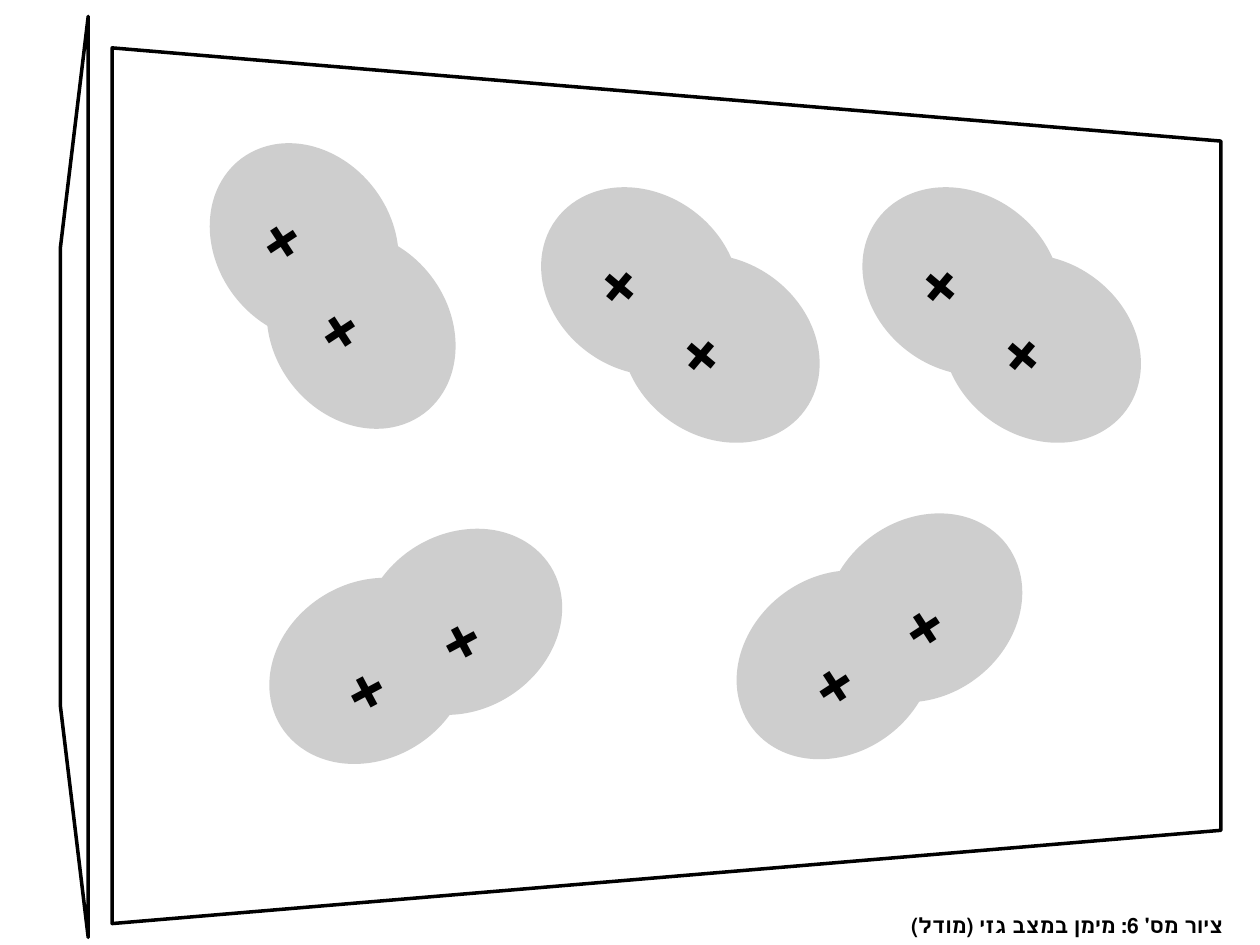
"""Build a slide with a model of hydrogen gas molecules in a container."""
from math import cos, radians, sin

from lxml import etree
from pptx import Presentation, util as u
from pptx.dml.color import RGBColor
from pptx.enum import shapes, text
from pptx.oxml.ns import qn

TITLE = "ציור מס' 6: מימן במצב גזי (מודל)"
FONT = "Times New Roman"
COLORS = {"ink": "000000", "atom": "CECECE"}
WALL_UNIT = u.Inches(0.01)
WALLS = [
    [(89, 38), (969, 112), (969, 659), (89, 733)],
    [(70, 13), (48, 196), (48, 561), (70, 744)],
]
MOLECULES = [
    (2.64, 2.27, 57),
    (5.4, 2.5, 40),
    (7.95, 2.5, 40),
    (6.98, 5.05, -33),
    (3.3, 5.13, -28),
]
ATOM_W, ATOM_H = 1.66, 1.4
BOND = 0.83
ATOM_TILT = -4
LABEL_H = 0.7
LABEL_ALONG, LABEL_ACROSS = 0.09, 0.06
NUCLEI_GAP = 1.15


def rgb(name):
    return RGBColor.from_string(COLORS[name])


def style(p, size):
    p.font.name, p.font.size, p.font.bold = FONT, u.Pt(size), True
    p.font.color.rgb = rgb("ink")
    p.space_before = u.Pt(0)
    p._p.get_or_add_pPr().set("rtl", "1")


def box(cx, cy, w, h):
    return [u.Inches(v) for v in (cx - w / 2, cy - h / 2, w, h)]


def add_wall(s, points):
    builder = s.shapes.build_freeform(*points[0], scale=WALL_UNIT)
    builder.add_line_segments(points[1:], close=True)
    sp = builder.convert_to_shape()
    sp.shadow.inherit = False
    sp.fill.background()
    sp.line.color.rgb = rgb("ink")
    sp.line.width = u.Pt(2)


def add_molecule(s, cx, cy, angle):
    group = s.shapes.add_group_shape().shapes
    dx, dy = cos(radians(angle)), sin(radians(angle))
    for side in (-BOND / 2, BOND / 2):
        sp = group.add_shape(
            shapes.MSO_SHAPE.OVAL,
            *box(cx + side * dx, cy + side * dy, ATOM_W, ATOM_H))
        sp.rotation = angle + ATOM_TILT
        sp.shadow.inherit = False
        sp.fill.solid()
        sp.fill.fore_color.rgb = rgb("atom")
        sp.line.fill.background()

    label_x = cx + LABEL_ALONG * dx - LABEL_ACROSS * dy
    label_y = cy + LABEL_ALONG * dy + LABEL_ACROSS * dx
    label = group.add_textbox(*box(label_x, label_y, ATOM_W, LABEL_H))
    label.rotation = angle
    tf = label.text_frame
    tf.word_wrap = True
    tf.margin_left = tf.margin_right = u.Inches(0.08)
    tf.margin_top = tf.margin_bottom = u.Inches(0.04)
    p = tf.paragraphs[0]
    p.text = "+\t+"
    style(p, 37)
    tabs = etree.Element(qn("a:tabLst"))
    etree.SubElement(tabs, qn("a:tab"), pos=str(u.Inches(NUCLEI_GAP)), algn="l")
    p.font._element.addprevious(tabs)


def add_title(s):
    title = s.shapes.title
    title.left, title.top, title.width, title.height = [
        u.Inches(v) for v in (5.87, 7.19, 3.94, 0.3)]
    tf = title.text_frame
    tf.word_wrap = True
    tf.auto_size = text.MSO_AUTO_SIZE.NONE
    tf.vertical_anchor = text.MSO_ANCHOR.MIDDLE
    p = tf.paragraphs[0]
    p.text = TITLE
    style(p, 12)
    p.alignment = text.PP_ALIGN.RIGHT


def main():
    prs = Presentation()
    prs.slide_width, prs.slide_height = u.Inches(10), u.Inches(7.5)
    s = prs.slides.add_slide(prs.slide_layouts[5])
    add_title(s)
    for points in WALLS:
        add_wall(s, points)
    for molecule in MOLECULES:
        add_molecule(s, *molecule)
    prs.save("out.pptx")


if __name__ == "__main__":
    main()
